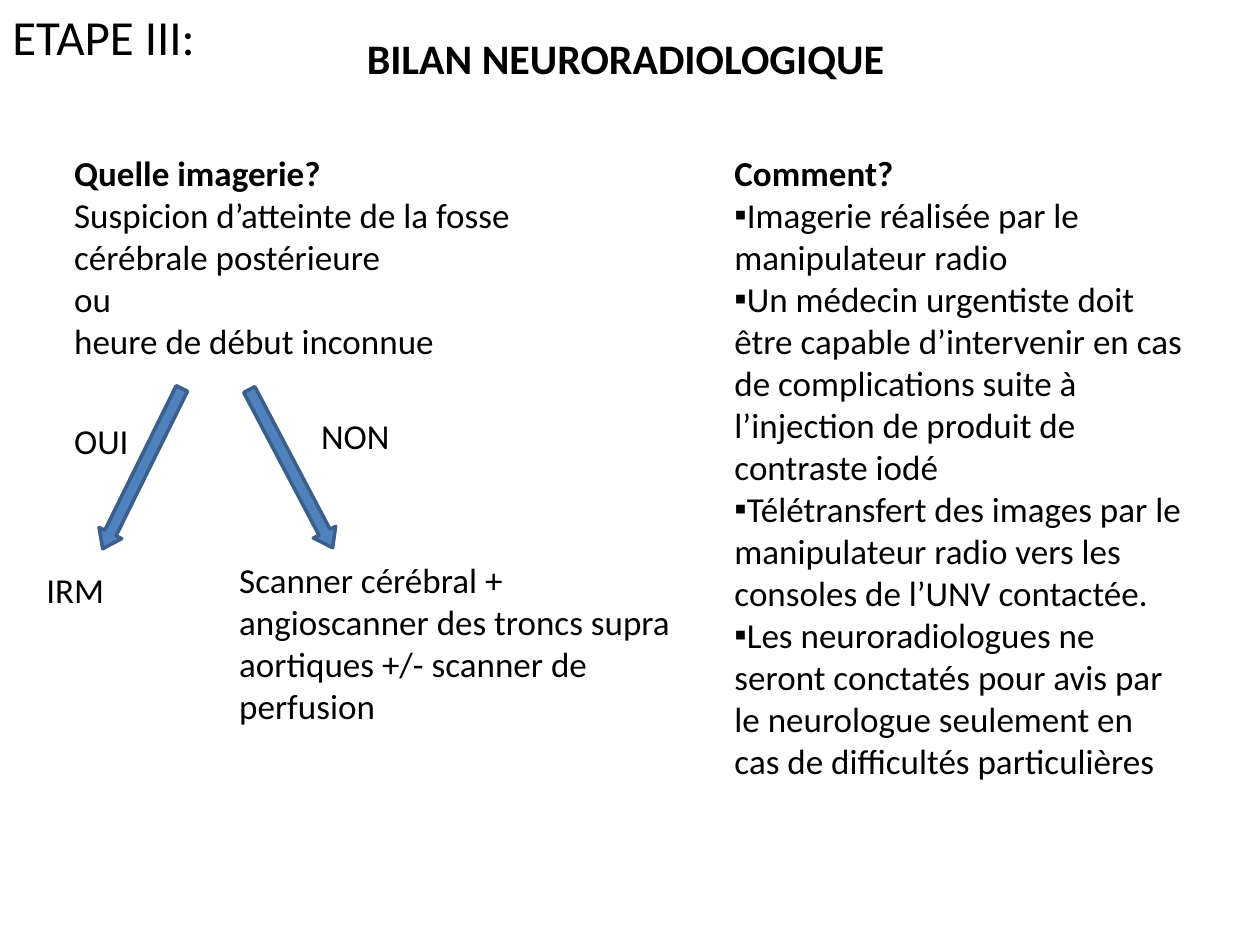
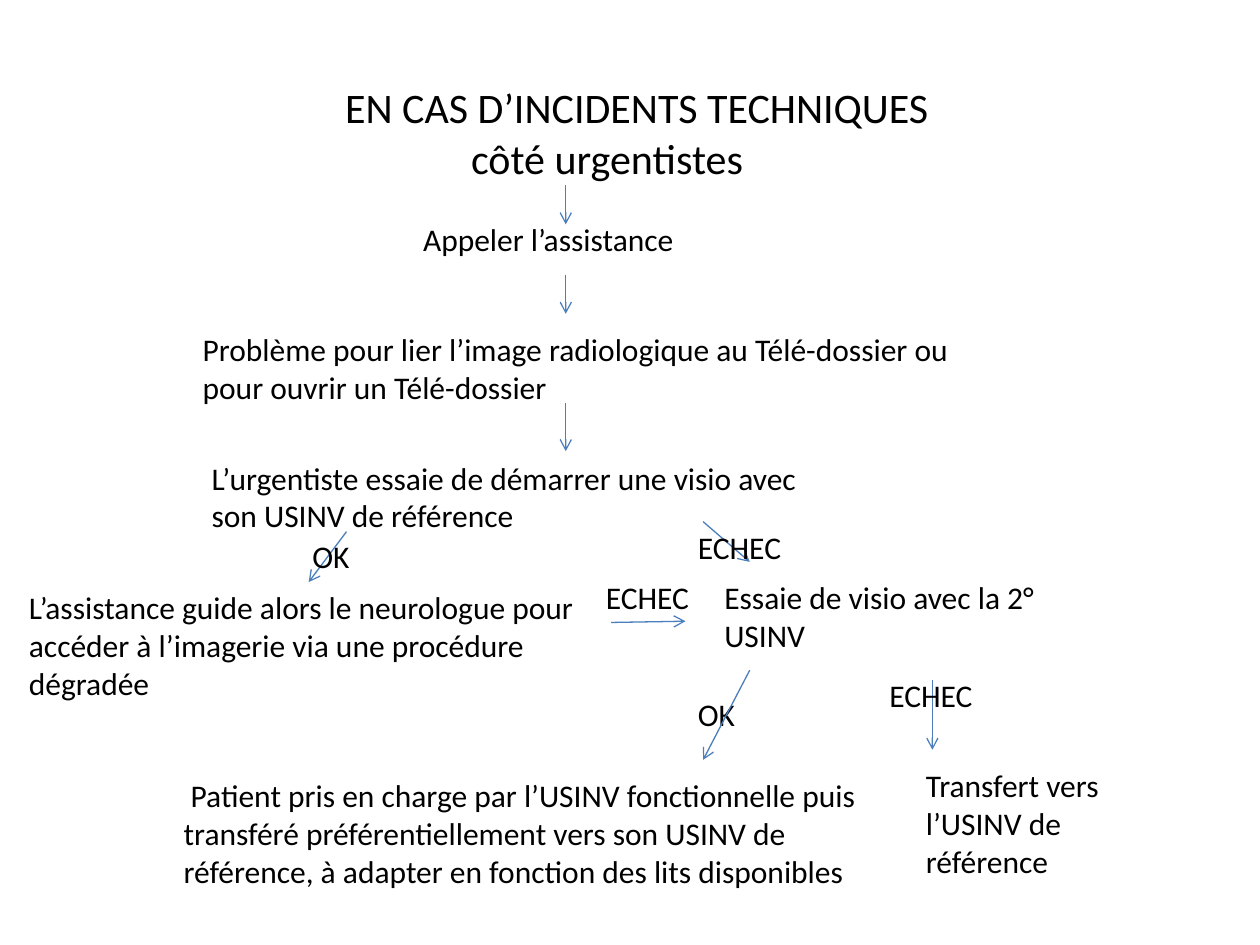
from dataclasses import dataclass

from lxml import etree
from pptx import Presentation
from pptx import util as u
from pptx.dml.color import RGBColor
from pptx.enum import shapes, text
from pptx.oxml.ns import qn

INK = {"text": "000000", "page": "FFFFFF", "block": "4F81BD",
       "edge": "3A5F8C", "link": "4B7EBC"}
FONT = "Calibri"
AXIS = 323.3  # centre line of the flow on slide 2


@dataclass
class Para:
    words: str
    bold: bool = False
    bullet: bool = False
    left: float = 0
    first: float = 0


@dataclass
class Note:
    x: float
    y: float
    w: float
    h: float
    paras: list[Para]
    size: float = 18
    center: bool = False


@dataclass
class Link:
    x1: float
    y1: float
    x2: float
    y2: float


@dataclass
class Block:
    x: float
    y: float
    turn: float


def color(name: str) -> RGBColor:
    return RGBColor.from_string(INK[name])


def add_note(slide, note: Note) -> None:
    box = slide.shapes.add_textbox(*map(u.Pt, (note.x, note.y, note.w, note.h)))
    frame = box.text_frame
    frame.word_wrap = True
    frame.auto_size = text.MSO_AUTO_SIZE.SHAPE_TO_FIT_TEXT
    for i, item in enumerate(note.paras):
        para = frame.add_paragraph() if i else frame.paragraphs[0]
        if note.center:
            para.alignment = text.PP_ALIGN.CENTER
        props = para._p.get_or_add_pPr()
        props.set("marL", str(u.Pt(item.left)))
        props.set("indent", str(u.Pt(item.first)))
        if item.bullet:
            etree.SubElement(props, qn("a:buFont")).set("typeface", "Arial")
            etree.SubElement(props, qn("a:buChar")).set("char", "▪")
        run = para.add_run()
        run.text = item.words
        run.font.name = FONT
        run.font.size = u.Pt(note.size)
        run.font.bold = item.bold
        run.font.color.rgb = color("text")


def add_link(slide, link: Link) -> None:
    ends = map(u.Pt, (link.x1, link.y1, link.x2, link.y2))
    line = slide.shapes.add_connector(shapes.MSO_CONNECTOR.STRAIGHT, *ends)
    line.line.color.rgb = color("link")
    line.line.width = u.Pt(0.75)
    etree.SubElement(line.line._get_or_add_ln(), qn("a:tailEnd")).set("type", "arrow")
    etree.SubElement(line._element.spPr, qn("a:effectLst"))


def add_block(slide, block: Block) -> None:
    arrow = slide.shapes.add_shape(shapes.MSO_SHAPE.LEFT_ARROW, u.Pt(block.x),
                                   u.Pt(block.y), u.Pt(102.2), u.Pt(14.4))
    arrow.adjustments[0], arrow.adjustments[1] = 0.5, 0.7
    arrow.rotation = block.turn
    arrow.shadow.inherit = False
    arrow.fill.solid()
    arrow.fill.fore_color.rgb = color("block")
    arrow.line.color.rgb = color("edge")
    arrow.line.width = u.Pt(2)


DRAW = {Note: add_note, Link: add_link, Block: add_block}


def label(x: float, y: float, w: float, h: float, words: str,
          size: float = 18, first: float = 0) -> Note:
    return Note(x, y, w, h, [Para(words, first=first)], size)


def echec(x: float, y: float) -> Note:
    return label(x, y, 104.4, 28.8, "ECHEC")


def success(x: float, y: float) -> Note:
    return label(x, y, 46.8, 28.8, "OK")


def choice(x: float, y: float, words: str) -> Note:
    return label(x, y, 62.6, 31, words, 20)


# Slide 1: imaging work-up
IMAGING = [
    label(0, 0, 119.5, 41, "ETAPE III:", 28),
    Note(108.7, 15.1, 497.5, 36.7, [Para("BILAN NEURORADIOLOGIQUE", bold=True)],
         24, center=True),
    Note(35.3, 82.8, 272.2, 127.4, [
        Para("Quelle imagerie?", bold=True),
        Para("Suspicion d’atteinte de la fosse cérébrale postérieure"),
        Para("ou"),
        Para("heure de début inconnue")], 20),
    choice(19.4, 321.1, "IRM"),
    label(129.6, 315.4, 272.2, 104.4, "Scanner cérébral + angioscanner des troncs "
          "supra aortiques +/- scanner de perfusion", 20),
    choice(35.3, 236.2, "OUI"),
    choice(176.4, 233.3, "NON"),
    Block(30.2, 260.6, 296.3),
    Block(115.2, 260.6, 242.2),
    Note(412.6, 82.8, 272.2, 395.3, [Para("Comment?", bold=True)] + [
        Para(words, bullet=True) for words in (
            "Imagerie réalisée par le manipulateur radio",
            "Un médecin urgentiste doit être capable d’intervenir en cas de "
            "complications suite à l’injection de produit de contraste iodé",
            "Télétransfert des images par le manipulateur radio vers les "
            "consoles de l’UNV contactée.",
            "Les neuroradiologues ne seront conctatés pour avis par le "
            "neurologue seulement en cas de difficultés particulières")], 20),
]

# Slide 2: technical incidents
INCIDENTS = [
    Note(46.1, 43.2, 591.8, 65.5, [
        Para("EN CAS D’INCIDENTS TECHNIQUES", left=144),
        Para("côté urgentistes", left=216)], 24),
    Link(AXIS, 105.8, AXIS, 128.2),
    label(234.7, 122.4, 204.5, 28.8, "Appeler l’assistance"),
    Link(AXIS, 157, AXIS, 179.3),
    label(108.7, 185, 475.9, 51.1, "Problème pour lier l’image radiologique au "
          "Télé-dossier ou pour ouvrir un Télé-dossier"),
    Link(AXIS, 230.4, AXIS, 257.8),
    label(113.8, 258.5, 360, 51.1, "L’urgentiste essaie de démarrer une visio "
          "avec son USINV de référence"),
    Link(198, 303.8, 176.4, 332.6),
    label(9.4, 332.6, 366.5, 72.7, "L’assistance guide alors le neurologue pour "
          "accéder à l’imagerie via une procédure dégradée"),
    Link(401.8, 298.1, 428.4, 321.1),
    success(171.4, 303.1),
    echec(391.7, 298.1),
    label(406.8, 326.9, 214.6, 51.1, "Essaie de visio avec la 2° USINV"),
    success(391.7, 393.8),
    Link(428.4, 383, 401.8, 434.2),
    Link(532.8, 388.8, 532.8, 428.4),
    echec(501.1, 383),
    label(522, 434.2, 151.9, 72.7, "Transfert vers l’USINV de référence"),
    label(97.9, 439.9, 403.2, 72.7, "Patient pris en charge par l’USINV "
          "fonctionnelle puis transféré préférentiellement vers son USINV de "
          "référence, à adapter en fonction des lits disponibles", first=4),
    Link(349.2, 355.7, 391.7, 355),
    echec(339.1, 326.9),
]


def main() -> None:
    deck = Presentation()
    deck.slide_width, deck.slide_height = u.Pt(720), u.Pt(540)
    for items in (IMAGING, INCIDENTS):
        slide = deck.slides.add_slide(deck.slide_layouts[6])
        slide.background.fill.solid()
        slide.background.fill.fore_color.rgb = color("page")
        for item in items:
            DRAW[type(item)](slide, item)
    deck.save("out.pptx")


if __name__ == "__main__":
    main()
